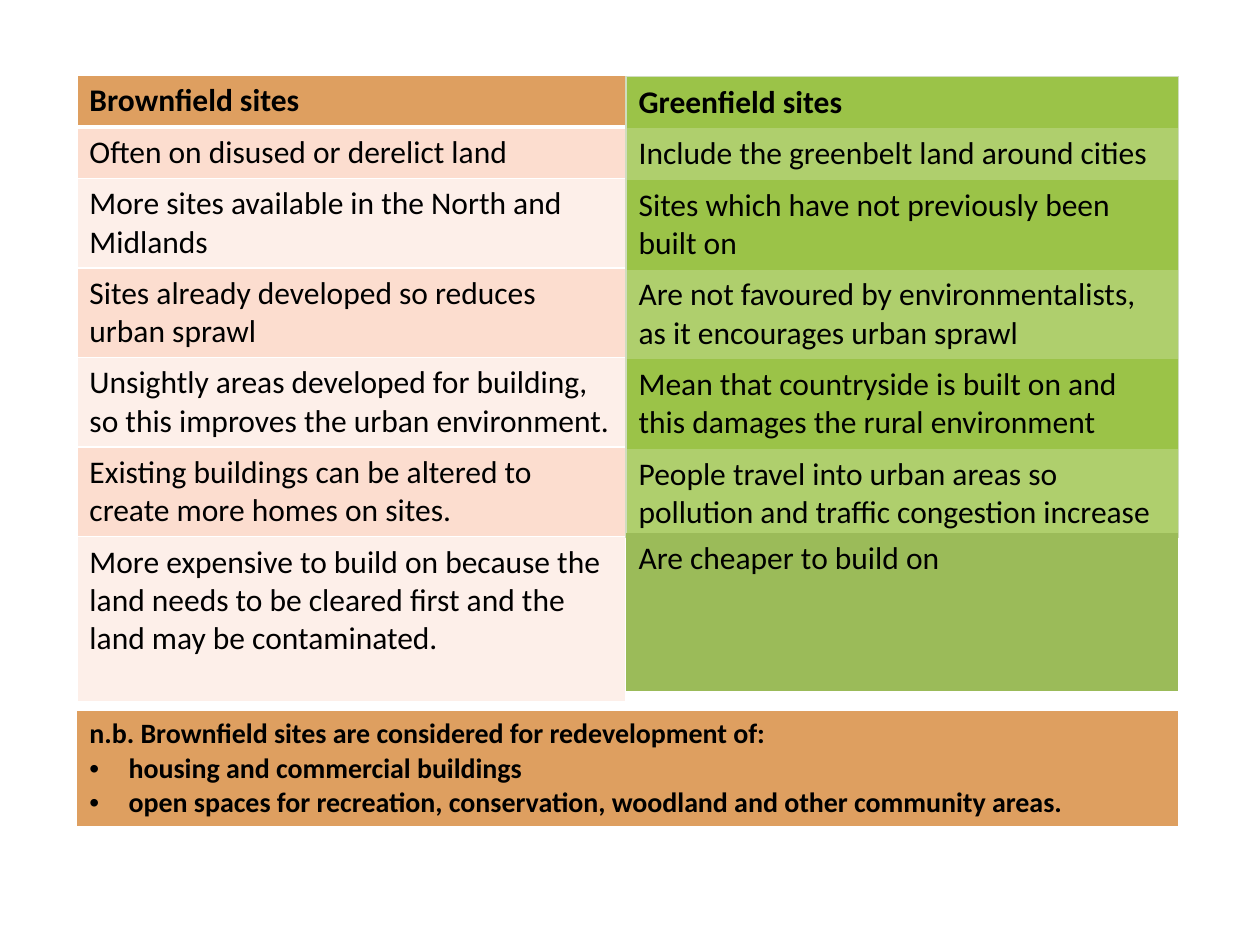
import pptx
import pptx.util
import pptx.dml.color
import pptx.oxml.ns
import lxml.etree

Cm, Pt = pptx.util.Cm, pptx.util.Pt
RGBColor = pptx.dml.color.RGBColor
qn = pptx.oxml.ns.qn

BLACK = RGBColor(0x00, 0x00, 0x00)
WHITE = RGBColor(0xFF, 0xFF, 0xFF)
ORANGE = RGBColor(0xDE, 0x9F, 0x60)
PINK = RGBColor(0xFC, 0xDD, 0xCF)
PALE_PINK = RGBColor(0xFD, 0xEF, 0xE9)
GREEN = RGBColor(0x9B, 0xC3, 0x48)
LIGHT_GREEN = RGBColor(0xAF, 0xCF, 0x6D)
OLIVE = RGBColor(0x9B, 0xBB, 0x59)
EDGE = RGBColor(0xD0, 0xDC, 0xBF)
PLAIN_STYLE = "{2D5ABB26-0587-4C30-8999-92F81FD0307C}"

BROWNFIELD = [
    "Brownfield sites",
    "Often on disused or derelict land",
    "More sites available in the North and Midlands",
    "Sites already developed so reduces urban sprawl",
    "Unsightly areas developed for building, so this improves the urban environment.",
    "Existing buildings can be altered to create more homes on sites.",
    "More expensive to build on because the land needs to be cleared first and the land may be contaminated.",
]
GREENFIELD = [
    "Greenfield sites",
    "Include the greenbelt land around cities",
    "Sites which have not previously been built on",
    "Are not favoured by environmentalists, as it encourages urban sprawl",
    "Mean that countryside is built on and this damages the rural environment",
    "People travel into urban areas so pollution and traffic congestion increase",
]
CHEAPER = "Are cheaper to build on"
NOTE = "n.b. Brownfield sites are considered for redevelopment of:"
NOTE_BULLETS = [
    "housing and commercial buildings",
    "open spaces for recreation, conservation, woodland and other community areas.",
]

LEFT, MIDDLE = 1.55, 12.62
LEFT_W, RIGHT_W = 11.07, 11.13
ONE_LINE, TWO_LINES = 1.04, 1.8


def add_text(p, text, size=18, bold=False, bullet=False):
    r = p.add_run()
    r.text = text
    r.font.name = "Calibri"
    r.font.size = Pt(size)
    r.font.bold = bold
    r.font.color.rgb = BLACK
    if bullet:
        pPr = p._p.get_or_add_pPr()
        pPr.set("marL", str(Cm(0.79)))
        pPr.set("indent", str(-Cm(0.79)))
        lxml.etree.SubElement(pPr, qn("a:buFont")).set("typeface", "Arial")
        lxml.etree.SubElement(pPr, qn("a:buChar")).set("char", "•")


def add_border(cell, side, color, width):
    ln = lxml.etree.SubElement(cell._tc.get_or_add_tcPr(), qn("a:ln" + side))
    ln.set("w", str(Pt(width)))
    fill = lxml.etree.SubElement(ln, qn("a:solidFill"))
    lxml.etree.SubElement(fill, qn("a:srgbClr")).set("val", str(color))


def add_table(s, left, top, width, heights, fills, borders=None):
    frame = s.shapes.add_table(len(heights), 1, Cm(left), Cm(top), Cm(width), Cm(sum(heights)))
    table = frame.table
    table.first_row = table.horz_banding = False
    table._tbl.tblPr.find(qn("a:tableStyleId")).text = PLAIN_STYLE
    table.columns[0].width = Cm(width)
    for i, (height, color) in enumerate(zip(heights, fills)):
        table.rows[i].height = Cm(height)
        cell = table.cell(i, 0)
        for side, line in (borders(i) if borders else {}).items():
            add_border(cell, side, *line)
        cell.fill.solid()
        cell.fill.fore_color.rgb = color
    return table


def add_list(table, texts):
    for i, text in enumerate(texts):
        add_text(table.cell(i, 0).text_frame.paragraphs[0], text, bold=i == 0)


def brown_borders(i):
    thin, thick = (WHITE, 1), (WHITE, 3)
    return {"L": thin, "R": thin, "T": thick if i == 1 else thin, "B": thick if i == 0 else thin}


def green_borders(i):
    line = (EDGE, 0.75)
    return {"L": line, "R": line, "T": line} if i == 0 else {"L": line, "R": line}


def main():
    prs = pptx.Presentation()
    prs.slide_width, prs.slide_height = Cm(25.4), Cm(19.05)
    s = prs.slides.add_slide(prs.slide_layouts[6])

    heights = [ONE_LINE] * 2 + [TWO_LINES] * 4
    brown = add_table(s, LEFT, 1.52, LEFT_W, heights + [3.32],
                      [ORANGE] + [PINK, PALE_PINK] * 3, brown_borders)
    add_list(brown, BROWNFIELD)
    green = add_table(s, MIDDLE, 1.55, RIGHT_W, heights, [GREEN, LIGHT_GREEN] * 3, green_borders)
    add_list(green, GREENFIELD)

    cheaper = add_table(s, MIDDLE, 10.74, RIGHT_W, [3.18], [OLIVE])
    add_text(cheaper.cell(0, 0).text_frame.paragraphs[0], CHEAPER)

    note = add_table(s, LEFT, 14.33, LEFT_W + RIGHT_W, [2.31], [ORANGE])
    tf = note.cell(0, 0).text_frame
    add_text(tf.paragraphs[0], NOTE, size=16, bold=True)
    for text in NOTE_BULLETS:
        add_text(tf.add_paragraph(), text, size=16, bold=True, bullet=True)

    prs.save("out.pptx")


if __name__ == "__main__":
    main()
